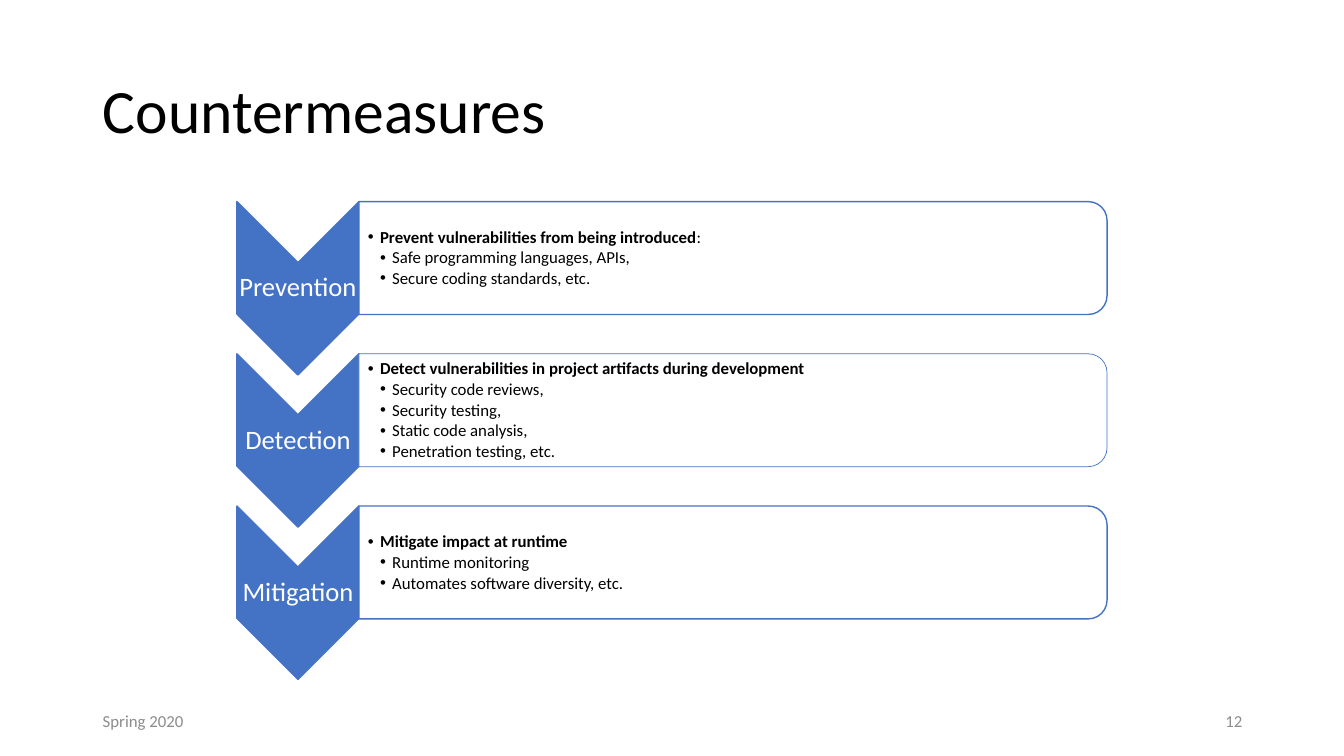
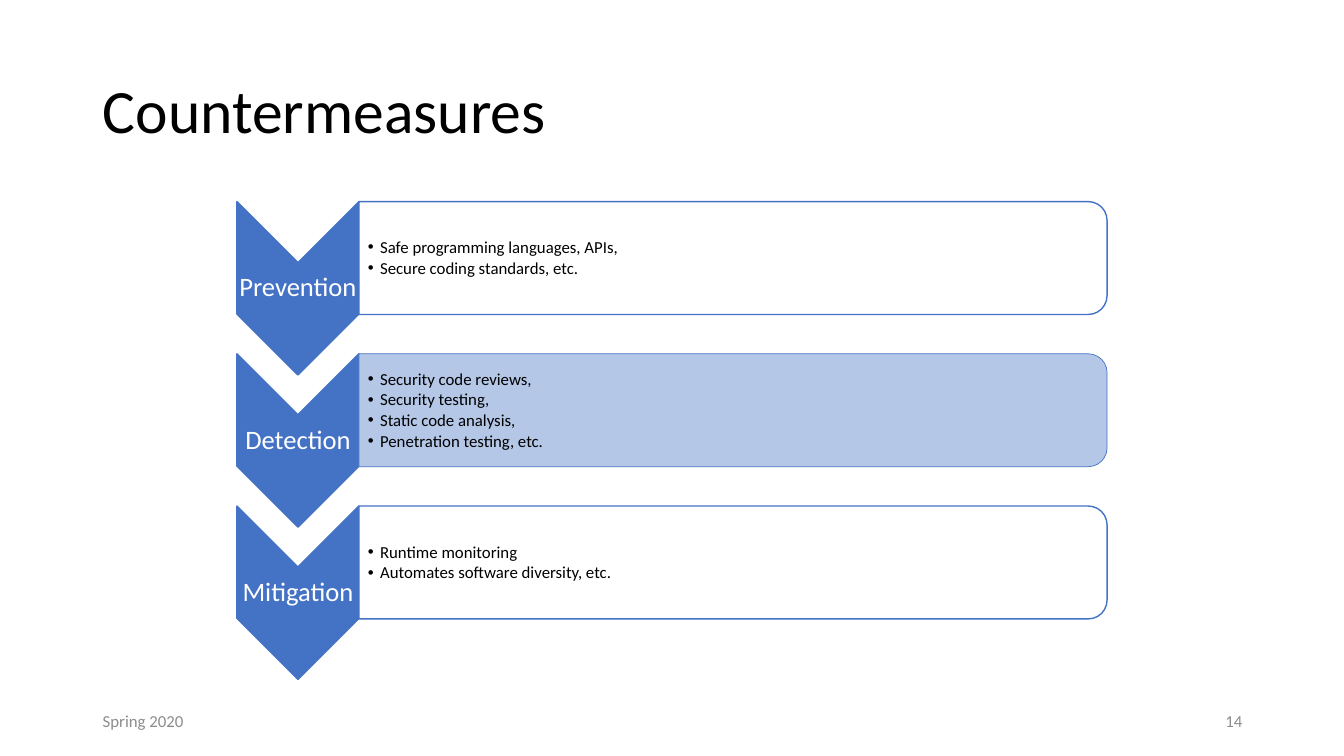
from dataclasses import dataclass

import pptx
import pptx.dml.color
import pptx.enum.shapes
import pptx.enum.text
import pptx.util
from lxml import etree
from pptx.oxml.ns import qn

Inches = pptx.util.Inches
Pt = pptx.util.Pt
Preset = pptx.enum.shapes.MSO_SHAPE
Align = pptx.enum.text.PP_ALIGN
Anchor = pptx.enum.text.MSO_ANCHOR

TITLE_ONLY = 5

# Diagram grid, in inches
ROW_TOP, ROW_PITCH = 2.0, 1.51
CHEVRON_LEFT, CHEVRON_WIDTH, CHEVRON_HEIGHT = 2.35, 1.21, 1.72
PANEL_LEFT = CHEVRON_LEFT + CHEVRON_WIDTH
PANEL_WIDTH, PANEL_HEIGHT = 7.42, 1.12
BULLET_STEP = 0.12

# Stage name: (heading, plain text after the heading, measures, outline in points)
STAGES = {
    "Prevention": (
        "Prevent vulnerabilities from being introduced", ":",
        ["Safe programming languages, APIs,", "Secure coding standards, etc."], 1),
    "Detection": (
        "Detect vulnerabilities in project artifacts during development", "",
        ["Security code reviews,", "Security testing,", "Static code analysis,",
         "Penetration testing, etc."], 0.5),
    "Mitigation": (
        "Mitigate impact at runtime", "",
        ["Runtime monitoring", "Automates software diversity, etc."], 1),
}


@dataclass(frozen=True)
class Theme:
    font: str = "Calibri"
    ink: str = "000000"
    paper: str = "FFFFFF"
    accent: str = "4472C4"
    highlight: str = "B4C7E7"
    muted: str = "8C8C8C"
    title_size: float = 44
    label_size: float = 19
    body_size: float = 12


def rgb(code):
    return pptx.dml.color.RGBColor.from_string(code)


def apply(target, values):
    for attribute, value in values.items():
        setattr(target, attribute, value)


class Deck:
    def __init__(self, theme):
        self.theme = theme
        self.presentation = pptx.Presentation()
        apply(self.presentation, {"slide_width": Inches(13.33),
                                  "slide_height": Inches(7.5)})
        self.slide = None

    def start_slide(self, title, number):
        layout = self.presentation.slide_layouts[TITLE_ONLY]
        self.slide = self.presentation.slides.add_slide(layout)
        heading = self.slide.shapes.title
        apply(heading, {"left": Inches(0.92), "top": Inches(0.4),
                        "width": Inches(11.5), "height": Inches(1.45)})
        self.frame(heading)
        self.add_words(heading.text_frame.paragraphs[0], title, self.theme.title_size,
                       self.theme.ink, alignment=Align.LEFT, line_spacing=0.9)

    def frame(self, box, insets=None):
        """Wrap and centre a box's text; insets are left, then the other sides."""
        text = box.text_frame
        apply(text, {"word_wrap": True, "vertical_anchor": Anchor.MIDDLE,
                     "auto_size": pptx.enum.text.MSO_AUTO_SIZE.NONE})
        if insets:
            left, other = map(Inches, insets)
            apply(text, {"margin_left": left, "margin_right": other,
                         "margin_top": other, "margin_bottom": other})
        return text

    def add_words(self, paragraph, words, size, color, bold=False, **layout):
        run = paragraph.add_run()
        run.text = words
        apply(run.font, {"name": self.theme.font, "size": Pt(size), "bold": bold})
        run.font.color.rgb = rgb(color)
        apply(paragraph, layout)

    def text_box(self, shapes, left, top, width, height, insets=None):
        box = shapes.add_textbox(Inches(left), Inches(top), Inches(width), Inches(height))
        return self.frame(box, insets)

    def footer(self, words, left, alignment):
        text = self.text_box(self.slide.shapes, left, 6.95, 3, 0.4)
        self.add_words(text.paragraphs[0], words, self.theme.body_size,
                       self.theme.muted, alignment=alignment)

    def turned_shape(self, shapes, preset, left, top, width, height, fill, outline):
        """Add a shape turned a quarter clockwise that covers the given area."""
        shift = (width - height) / 2
        shape = shapes.add_shape(preset, Inches(left + shift), Inches(top - shift),
                                 Inches(height), Inches(width))
        shape.rotation = 90
        shape.shadow.inherit = False
        shape.fill.solid()
        shape.fill.fore_color.rgb = rgb(fill)
        shape.line.color.rgb = rgb(self.theme.accent)
        shape.line.width = Pt(outline)

    def bullet(self, paragraph, words, level, bold=False):
        properties = paragraph._p.get_or_add_pPr()
        properties.set("marL", str(Inches(BULLET_STEP * (level + 1))))
        properties.set("indent", str(Inches(-BULLET_STEP)))
        etree.SubElement(properties, qn("a:buFont"), typeface="Arial")
        etree.SubElement(properties, qn("a:buChar"), char="•")
        self.add_words(paragraph, words, self.theme.body_size, self.theme.ink, bold,
                       level=level, line_spacing=0.9,
                       space_after=Pt(0.15 * self.theme.body_size))

    def stage(self, shapes, row, name, with_heading, fill):
        theme = self.theme
        heading, suffix, measures, outline = STAGES[name]
        top = ROW_TOP + row * ROW_PITCH
        self.turned_shape(shapes, Preset.CHEVRON, CHEVRON_LEFT, top,
                          CHEVRON_WIDTH, CHEVRON_HEIGHT, theme.accent, 1)
        label = self.text_box(shapes, CHEVRON_LEFT, top + 0.6, CHEVRON_WIDTH, 0.52,
                              (0.01, 0.01))
        self.add_words(label.paragraphs[0], name, theme.label_size, theme.paper,
                       alignment=Align.CENTER, line_spacing=0.9)
        self.turned_shape(shapes, Preset.ROUND_2_SAME_RECTANGLE, PANEL_LEFT, top,
                          PANEL_WIDTH, PANEL_HEIGHT, fill, outline)
        body = self.text_box(shapes, PANEL_LEFT, top + 0.06, 7.36, 1.01, (0.09, 0.01))

        entries = [(measure, int(with_heading)) for measure in measures]
        if with_heading:
            entries.insert(0, (heading, 0))
        for index, (words, level) in enumerate(entries):
            paragraph = body.add_paragraph() if index else body.paragraphs[0]
            is_heading = with_heading and index == 0
            self.bullet(paragraph, words, level, bold=is_heading)
            if is_heading and suffix:
                self.add_words(paragraph, suffix, theme.body_size, theme.ink)

    def countermeasures(self, number, with_headings, highlighted=None):
        self.start_slide("Countermeasures", number)
        diagram = self.slide.shapes.add_group_shape().shapes
        for row, name in enumerate(STAGES):
            fill = self.theme.highlight if name == highlighted else self.theme.paper
            self.stage(diagram, row, name, with_headings, fill)
        self.footer("Spring 2020", 0.92, Align.LEFT)
        self.footer(str(number), 9.42, Align.RIGHT)


def main():
    deck = Deck(Theme())
    deck.countermeasures(12, with_headings=True)
    deck.countermeasures(14, with_headings=False, highlighted="Detection")
    deck.presentation.save("out.pptx")


if __name__ == "__main__":
    main()
